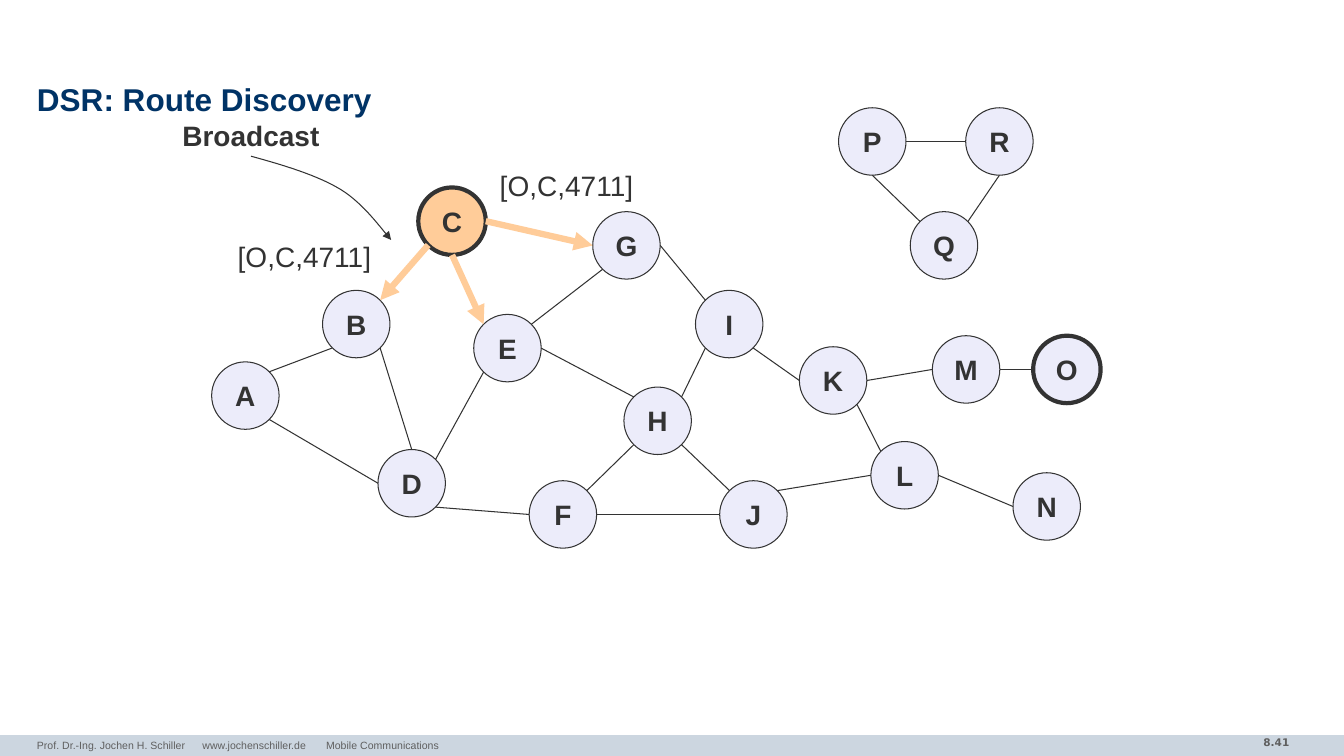
from lxml.etree import SubElement
from pptx import Presentation
from pptx.dml.color import RGBColor
from pptx.enum.shapes import MSO_CONNECTOR, MSO_SHAPE
from pptx.enum.text import MSO_ANCHOR, MSO_AUTO_SIZE, PP_ALIGN
from pptx.oxml.ns import qn
from pptx.util import Pt

INK = RGBColor(0x33, 0x33, 0x33)
NAVY = RGBColor(0x00, 0x33, 0x66)
GREY = RGBColor(0x5F, 0x5F, 0x5F)
BAND = RGBColor(0xCC, 0xD6, 0xE0)
LAVENDER = RGBColor(0xEC, 0xEC, 0xFA)
ORANGE = RGBColor(0xFF, 0xCC, 0x99)

NODE_SIZE = 48.2
DIAGONAL = 0.5 ** 0.5
SITES = {
    "n": (0, -1), "s": (0, 1), "w": (-1, 0), "e": (1, 0),
    "nw": (-DIAGONAL, -DIAGONAL), "ne": (DIAGONAL, -DIAGONAL),
    "sw": (-DIAGONAL, DIAGONAL), "se": (DIAGONAL, DIAGONAL),
}
NODES = {
    "A": (151.2, 258.5), "B": (230.4, 207.4), "C": (298.8, 133.9),
    "D": (270, 321.1), "E": (338.4, 224.6), "F": (378, 343.4),
    "G": (423.4, 151.2), "H": (445.7, 276.5), "I": (496.8, 207.4),
    "J": (514.1, 343.4), "K": (571, 247.7), "L": (622.1, 315.4),
    "M": (666, 239.8), "N": (723.6, 337.7), "O": (738, 239.8),
    "P": (599, 77), "Q": (650.2, 151.2), "R": (689.8, 77),
}
LINKS = [
    "A ne B sw", "A se D w", "B se D n", "G sw E ne", "H nw E e", "E sw D ne",
    "F w D se", "H sw F ne", "I nw G e", "I sw H ne", "J nw H se", "K w I se",
    "L w J ne", "L nw K se", "M w K e", "N w L e", "O w M e", "P s Q nw",
    "P e R w", "Q ne R s", "J w F e",
]
BROADCASTS = ["C sw B ne", "C s E nw", "C e G w"]
POINTER_CURVES = [
    [(179.3, 111.6), (203, 118.1), (226.8, 125.3), (243.4, 135.4)],
    [(243.4, 135.4), (259.9, 145.4), (272.9, 164.2), (279.4, 171.4)],
]


def bezier(points, steps=16):
    """Return points along a cubic curve, without its start."""
    curve = []
    for step in range(1, steps + 1):
        t = step / steps
        weights = ((1 - t) ** 3, 3 * t * (1 - t) ** 2, 3 * t * t * (1 - t), t ** 3)
        curve.append(tuple(sum(w * p[axis] for w, p in zip(weights, points))
                           for axis in (0, 1)))
    return curve


def site(node, direction):
    """Return a point on the rim of a node."""
    return [corner + NODE_SIZE / 2 * (1 + offset)
            for corner, offset in zip(NODES[node], SITES[direction])]


class NetworkSlide:
    """Holds the style and the current slide."""

    def __init__(self, presentation):
        """Add a title-only slide."""
        self.slide = presentation.slides.add_slide(presentation.slide_layouts[5])
        self.shapes = self.slide.shapes

    def style(self, paragraph, size, color, bold=False, font="Arial"):
        """Format a whole paragraph."""
        paragraph.font.name = font
        paragraph.font.size = Pt(size)
        paragraph.font.bold = bold
        paragraph.font.color.rgb = color

    def arrowhead(self, shape):
        """Put a triangle at the end of a line."""
        SubElement(shape.line._get_or_add_ln(), qn("a:tailEnd"), type="triangle")

    def title(self, text, left, top, width, height):
        """Place and format the title."""
        title = self.shapes.title
        title.left, title.top = Pt(left), Pt(top)
        title.width, title.height = Pt(width), Pt(height)
        frame = title.text_frame
        frame.text = text
        frame.auto_size = MSO_AUTO_SIZE.NONE
        frame.vertical_anchor = MSO_ANCHOR.MIDDLE
        frame.margin_left = frame.margin_right = frame.margin_top = frame.margin_bottom = 0
        paragraph = frame.paragraphs[0]
        paragraph.alignment = PP_ALIGN.LEFT
        paragraph.line_spacing = 0.85
        self.style(paragraph, 22.5, NAVY, True)

    def text(self, text, box, size=20, color=INK, bold=False, font="Arial",
             align=PP_ALIGN.LEFT, wrap=False, margin=7.2, tabs=()):
        """Add a one-line text box."""
        frame = self.shapes.add_textbox(*map(Pt, box)).text_frame
        frame.word_wrap = wrap
        frame.margin_left = frame.margin_right = Pt(margin)
        frame.text = text
        paragraph = frame.paragraphs[0]
        paragraph.alignment = align
        if tabs:
            tab_list = SubElement(paragraph._p.get_or_add_pPr(), qn("a:tabLst"))
            for position in tabs:
                SubElement(tab_list, qn("a:tab"), pos=str(Pt(position)), algn="l")
        self.style(paragraph, size, color, bold, font)

    def band(self, left, top, width, height):
        """Add a plain footer band."""
        shape = self.shapes.add_shape(MSO_SHAPE.RECTANGLE, Pt(left), Pt(top), Pt(width), Pt(height))
        shape.shadow.inherit = False
        shape.fill.solid()
        shape.fill.fore_color.rgb = BAND
        shape.line.fill.background()

    def node(self, name, fill=LAVENDER, line_width=0.75):
        """Add a lettered circle."""
        left, top = NODES[name]
        shape = self.shapes.add_shape(MSO_SHAPE.OVAL, Pt(left), Pt(top), Pt(NODE_SIZE), Pt(NODE_SIZE))
        shape.shadow.inherit = False
        shape.fill.solid()
        shape.fill.fore_color.rgb = fill
        shape.line.color.rgb = INK
        shape.line.width = Pt(line_width)
        frame = shape.text_frame
        frame.text = name
        frame.word_wrap = False
        frame.vertical_anchor = MSO_ANCHOR.MIDDLE
        frame.paragraphs[0].alignment = PP_ALIGN.CENTER
        self.style(frame.paragraphs[0], 20, INK, True)

    def link(self, route, color=INK, width=0.75, arrow=False):
        """Join two nodes, given as node, side, node, side."""
        start, start_side, end, end_side = route.split()
        points = site(start, start_side) + site(end, end_side)
        connector = self.shapes.add_connector(MSO_CONNECTOR.STRAIGHT, *map(Pt, points))
        connector.line.color.rgb = color
        connector.line.width = Pt(width)
        if arrow:
            self.arrowhead(connector)
        SubElement(connector._element.spPr, qn("a:effectLst"))

    def pointer(self, curves):
        """Add a curved arrow."""
        start = curves[0][0]
        builder = self.shapes.build_freeform(Pt(start[0]), Pt(start[1]))
        points = [point for curve in curves for point in bezier(curve)]
        builder.add_line_segments([(Pt(x), Pt(y)) for x, y in points], close=False)
        shape = builder.convert_to_shape()
        shape.shadow.inherit = False
        shape.fill.background()
        shape.line.color.rgb = INK
        shape.line.width = Pt(0.75)
        self.arrowhead(shape)


def main():
    """Build the route discovery slide."""
    presentation = Presentation()
    presentation.slide_width, presentation.slide_height = Pt(960), Pt(540)
    network = NetworkSlide(presentation)
    network.band(0, 525, 960, 15)
    network.text("8.41", (799.2, 522, 128.9, 18.7), 7.5, GREY, True, "DejaVu Sans",
                 PP_ALIGN.RIGHT, True)
    network.title("DSR: Route Discovery", 26.4, 56.2, 907.2, 33.8)
    network.text("Prof. Dr.-Ing. Jochen H. Schiller\twww.jochenschiller.de\tMobile Communications",
                 (26.4, 524.2, 627.8, 15.8), 7.5, GREY, wrap=True, margin=0, tabs=(118.2, 206.5))
    network.text("Broadcast", (123.1, 81.4, 112.3, 31), bold=True, align=PP_ALIGN.CENTER)
    network.pointer(POINTER_CURVES)
    emphasis = {"C": (ORANGE, 3), "O": (LAVENDER, 3)}
    for name in NODES:
        network.node(name, *emphasis.get(name, ()))
    for route in LINKS:
        network.link(route)
    for route in BROADCASTS:
        network.link(route, ORANGE, 4.5, True)
    for left, top in ((349.9, 116.6), (162.7, 167.8)):
        network.text("[O,C,4711]", (left, top, 110.9, 31))
    presentation.save("out.pptx")


if __name__ == "__main__":
    main()
